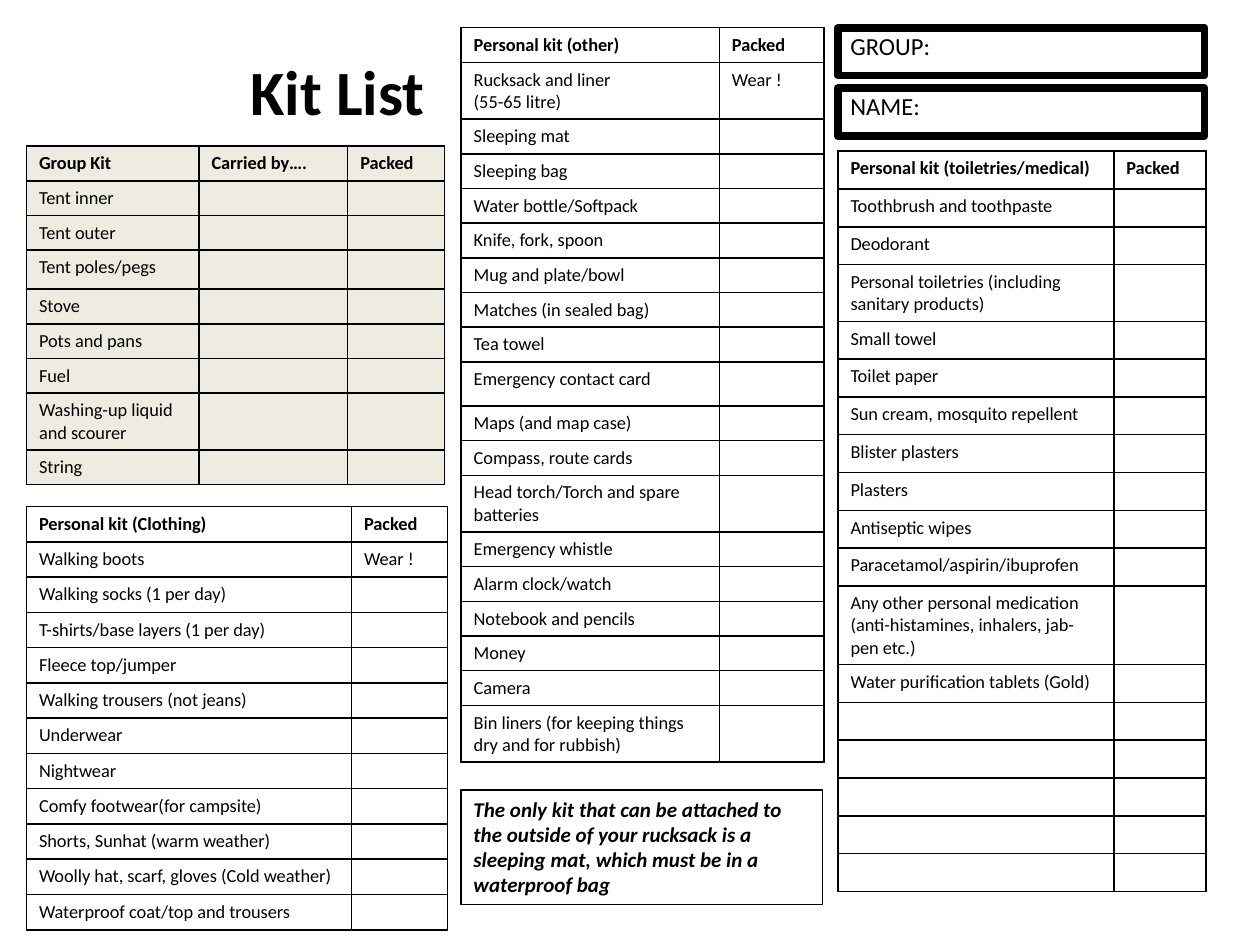
from lxml.etree import SubElement as sub
from pptx import Presentation
from pptx.dml.color import RGBColor as RGB
from pptx.enum.shapes import MSO_SHAPE as SHAPE
from pptx.enum.text import MSO_ANCHOR as ANCHOR, MSO_AUTO_SIZE as AUTO, PP_ALIGN as ALIGN
from pptx.oxml.ns import qn
from pptx.util import Inches, Pt


def write(par, text, size, bold=False, italic=False):
    run = par.add_run()
    run.text = text
    font = run.font
    font.name, font.size, font.bold, font.italic = "Calibri", Pt(size), bold, italic
    font.color.rgb = RGB.from_string("000000")
    return run


def edge(node, tag, width, color):
    line = sub(node, qn(tag), w=str(Pt(width)))
    sub(sub(line, qn("a:solidFill")), qn("a:srgbClr"), val=color)
    return line


deck = Presentation()
deck.slide_width, deck.slide_height = Inches(10), Inches(7.5)
slide = deck.slides.add_slide(deck.slide_layouts[5])

title = slide.shapes.title
title.left, title.top = Inches(1.88), Inches(0.36)
title.width, title.height = Inches(1.6), Inches(0.71)
frame = title.text_frame
frame.word_wrap = False
frame.auto_size = AUTO.SHAPE_TO_FIT_TEXT
frame.vertical_anchor = ANCHOR.MIDDLE
par = frame.paragraphs[0]
par.alignment = ALIGN.CENTER
props = write(par, "Kit List", 36, True).font._element
props.insert(0, edge(props, "a:ln", 1, "054697"))

note = ("The only kit that can be attached to the outside of your rucksack is a "
        "sleeping mat, which must be in a waterproof bag")
boxes = [
    ("GROUP:", 6.65, 0.22, 2.91, 0.38, 4.5, 14, False),
    ("NAME:", 6.65, 0.7, 2.91, 0.38, 4.5, 14, False),
    (note, 3.66, 6.27, 2.87, 0.91, 0.75, 12, True),
]
for text, left, top, width, height, line, size, strong in boxes:
    box = slide.shapes.add_shape(SHAPE.RECTANGLE, Inches(left), Inches(top),
                                 Inches(width), Inches(height))
    box.shadow.inherit = False
    box.fill.background()
    box.line.color.rgb = RGB.from_string("000000")
    box.line.width = Pt(line)
    frame = box.text_frame
    frame.word_wrap = True
    if strong:
        frame.vertical_anchor = ANCHOR.TOP
        frame.auto_size = AUTO.SHAPE_TO_FIT_TEXT
    else:
        frame.vertical_anchor = ANCHOR.MIDDLE
        frame.margin_top, frame.margin_bottom = 0, Inches(0.1)
    par = frame.paragraphs[0]
    par.alignment = ALIGN.LEFT
    write(par, text, size, strong, strong)

group = [
    ["Group Kit", "Carried by….", "Packed"], ["Tent inner"], ["Tent outer"],
    ["Tent poles/pegs"], ["Stove"], ["Pots and pans"], ["Fuel"],
    ["Washing-up liquid and scourer"], ["String"],
]
wash = [
    ["Personal kit (toiletries/medical)", "Packed"], ["Toothbrush and toothpaste"],
    ["Deodorant"], ["Personal toiletries (including sanitary products)"],
    ["Small towel"], ["Toilet paper"], ["Sun cream, mosquito repellent"],
    ["Blister plasters"], ["Plasters"], ["Antiseptic wipes"],
    ["Paracetamol/aspirin/ibuprofen"],
    ["Any other personal medication (anti-histamines, inhalers, jab-pen etc.)"],
    ["Water purification tablets (Gold)"],
] + [[]] * 5
other = [
    ["Personal kit (other)", "Packed"], ["Rucksack and liner\n(55-65 litre)", "Wear !"],
    ["Sleeping mat"], ["Sleeping bag"], ["Water bottle/Softpack"],
    ["Knife, fork, spoon"], ["Mug and plate/bowl"], ["Matches (in sealed bag)"],
    ["Tea towel"], ["Emergency contact card"], ["Maps (and map case)"],
    ["Compass, route cards"], ["Head torch/Torch and spare batteries"],
    ["Emergency whistle"], ["Alarm clock/watch"], ["Notebook and pencils"],
    ["Money"], ["Camera"], ["Bin liners (for keeping things dry and for rubbish)"],
]
clothes = [
    ["Personal kit (Clothing)", "Packed"], ["Walking boots", "Wear !"],
    ["Walking socks (1 per day)"], ["T-shirts/base layers (1 per day)"],
    ["Fleece top/jumper"], ["Walking trousers (not jeans)"], ["Underwear"],
    ["Nightwear"], ["Comfy footwear(for campsite)"],
    ["Shorts, Sunhat (warm weather)"], ["Woolly hat, scarf, gloves (Cold weather)"],
    ["Waterproof coat/top and trousers"],
]
lists = [
    (group, 0.21, 1.16, [1.37, 1.18, 0.77], 0.27, {3: 0.31, 7: 0.42}, "EEECE1"),
    (wash, 6.65, 1.2, [2.19, 0.73], 0.3, {}, None),
    (other, 3.66, 0.22, [2.05, 0.83], 0.27, {1: 0.44, 9: 0.35, 12: 0.44}, None),
    (clothes, 0.21, 4.02, [2.58, 0.76], 0.28, {}, None),
]
for rows, left, top, cols, step, tall, shade in lists:
    sizes = [tall.get(r, step) for r in range(len(rows))]
    table = slide.shapes.add_table(len(rows), len(cols), Inches(left), Inches(top),
                                   Inches(sum(cols)), Inches(sum(sizes))).table
    table.first_row = table.horz_banding = False
    for c, width in enumerate(cols):
        table.columns[c].width = Inches(width)
    for r, row in enumerate(rows):
        table.rows[r].height = Inches(sizes[r])
        for c in range(len(cols)):
            cell = table.cell(r, c)
            frame = cell.text_frame
            if c < len(row):
                for i, text in enumerate(row[c].split("\n")):
                    par = frame.add_paragraph() if i else frame.paragraphs[0]
                    write(par, text, 10.5, r == 0)
            else:
                sub(frame.paragraphs[0]._p, qn("a:endParaRPr"), sz="1050")
            props = cell._tc.get_or_add_tcPr()
            for tag in ("a:lnL", "a:lnR", "a:lnT", "a:lnB"):
                edge(props, tag, 1, "000000")
            if shade:
                cell.fill.solid()
                cell.fill.fore_color.rgb = RGB.from_string(shade)
            else:
                cell.fill.background()

deck.save("out.pptx")
